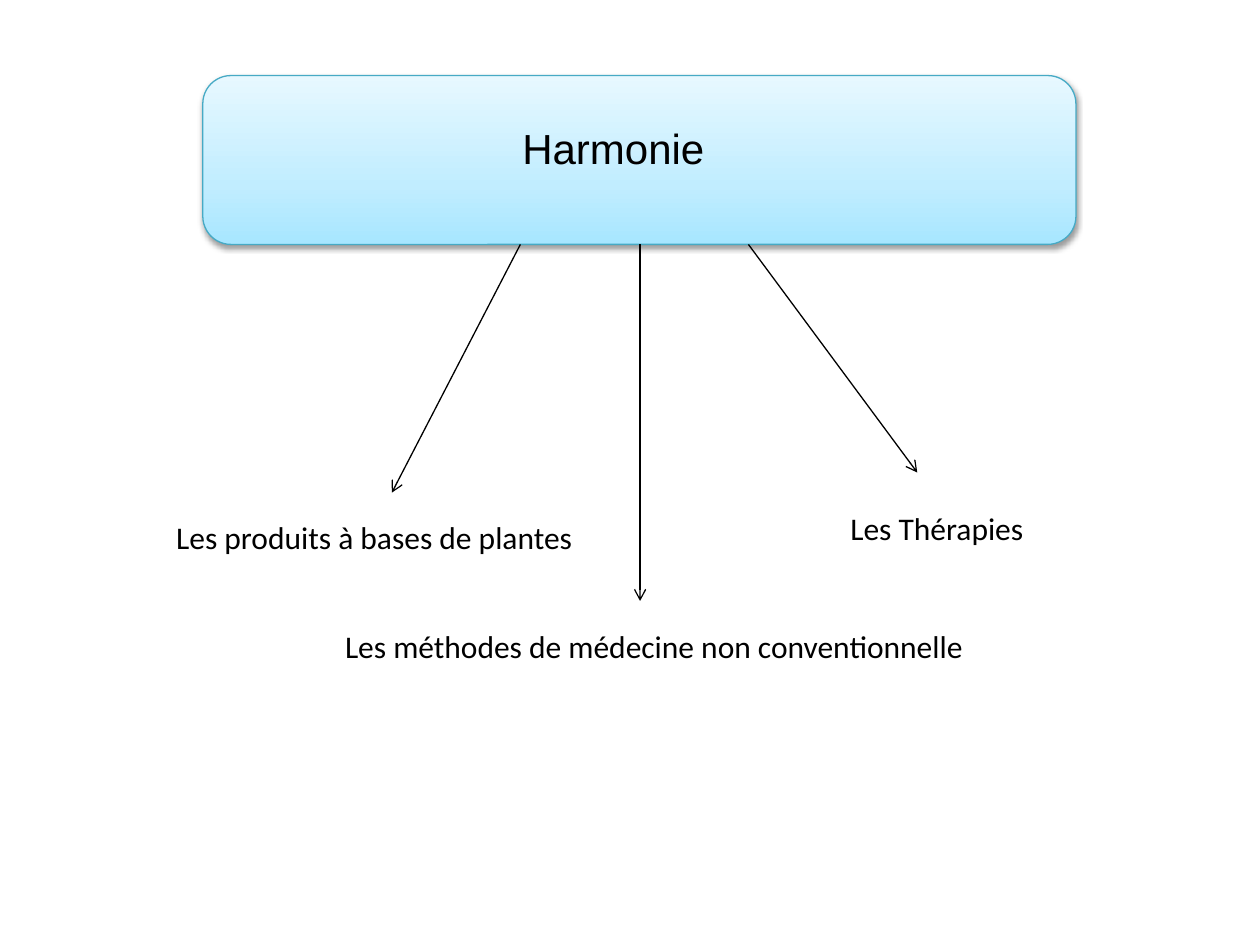
from collections import namedtuple

from lxml.etree import SubElement
from pptx import Presentation
from pptx.dml.color import RGBColor
from pptx.enum.shapes import MSO_CONNECTOR as Connector, MSO_SHAPE as Shape
from pptx.enum.text import MSO_ANCHOR as Anchor, MSO_AUTO_SIZE as AutoSize, PP_ALIGN as Align
from pptx.oxml.ns import qn
from pptx.util import Inches, Pt

BLACK = RGBColor(0x00, 0x00, 0x00)
TEAL = RGBColor(0x46, 0xAA, 0xC5)
SKY = RGBColor(0xA7, 0xE6, 0xFF)
PALE_SKY = RGBColor(0xC1, 0xED, 0xFF)
MIST = RGBColor(0xE7, 0xF8, 0xFF)

WIDTH, HEIGHT = 10, 7.5
BANNER_STOPS = [(0, SKY), (35, PALE_SKY), (100, MIST)]
TITLE_FONT = {"name": "Arial", "size": Pt(24), "bold": False}
BRANCH_FONT = {"name": "Calibri", "size": Pt(18)}

Box = namedtuple("Box", "left top width height")
Branch = namedtuple("Branch", "text start tip label")

BANNER = Box(1.61, 0.6, 6.93, 1.34)
BRANCHES = [
    Branch("Les produits à bases de plantes", 4.13, (3.11, 3.91), Box(1.3, 4.06, 3.39, 0.4)),
    Branch("Les Thérapies", 5.94, (7.28, 3.75), Box(6.65, 3.99, 1.59, 0.4)),
    Branch("Les méthodes de médecine non conventionnelle", 5.08, (5.08, 4.77),
           Box(2.64, 4.93, 5.17, 0.4)),
]


def inside(box, left, top, width, height):
    """Return the part of a box given by shares of its size."""
    return Box(box.left + left * box.width, box.top + top * box.height,
               width * box.width, height * box.height)


def emu(box):
    """Convert a box in inches to slide lengths."""
    return [Inches(length) for length in box]


def add_node(parent, tag, **attributes):
    """Append a DrawingML element with its attributes."""
    return SubElement(parent, qn(tag), {key: str(value) for key, value in attributes.items()})


def write(shape, text, font_format, **frame_format):
    """Put formatted text in a shape."""
    frame = shape.text_frame
    frame.text = text
    for key, value in frame_format.items():
        setattr(frame, key, value)
    font = frame.paragraphs[0].runs[0].font
    for key, value in font_format.items():
        setattr(font, key, value)
    font.color.rgb = BLACK


def paint_gradient(shape, stops):
    """Fill a shape upwards through the given colour stops."""
    shape.fill.gradient()
    shape.fill.gradient_angle = 90
    stop_list = shape.element.spPr.find(".//" + qn("a:gsLst"))
    stop_list[:] = []
    for position, colour in stops:
        stop = add_node(stop_list, "a:gs", pos=position * 1000)
        add_node(stop, "a:srgbClr", val=colour)


def cast_shadow(shape):
    """Give a shape a soft shadow below it."""
    shape.shadow.inherit = False
    effects = shape.element.spPr.find(qn("a:effectLst"))
    shadow = add_node(effects, "a:outerShdw", blurRad=Pt(3.1), dist=Pt(1.6),
                      dir=5400000, rotWithShape=0)
    colour = add_node(shadow, "a:srgbClr", val=BLACK)
    add_node(colour, "a:alpha", val=38000)


def draw_banner(slide, box, text):
    """Draw the rounded banner and set the slide title on it."""
    banner = slide.shapes.add_shape(Shape.ROUNDED_RECTANGLE, *emu(box))
    paint_gradient(banner, BANNER_STOPS)
    banner.line.color.rgb = TEAL
    banner.line.width = Pt(0.75)
    cast_shadow(banner)

    title = slide.shapes.title
    title.left, title.top, title.width, title.height = emu(inside(box, 0.1, 0.24, 0.74, 0.37))
    write(title, text, TITLE_FONT, word_wrap=True, vertical_anchor=Anchor.TOP,
          auto_size=AutoSize.SHAPE_TO_FIT_TEXT)
    title.text_frame.paragraphs[0].alignment = Align.CENTER
    banner.element.addnext(title.element)


def draw_branch(slide, box, branch):
    """Draw an arrow from the bottom of the box to a labelled branch."""
    ends = (branch.start, box.top + box.height, *branch.tip)
    arrow = slide.shapes.add_connector(Connector.STRAIGHT, *emu(ends))
    arrow.line.color.rgb = BLACK
    arrow.line.width = Pt(0.75)
    properties = arrow.element.spPr
    add_node(properties.find(qn("a:ln")), "a:tailEnd", type="arrow")
    add_node(properties, "a:effectLst")

    label = slide.shapes.add_textbox(*emu(branch.label))
    write(label, branch.text, BRANCH_FONT, word_wrap=False,
          auto_size=AutoSize.SHAPE_TO_FIT_TEXT)


def main():
    """Build the slide and save it."""
    deck = Presentation()
    deck.slide_width, deck.slide_height = Inches(WIDTH), Inches(HEIGHT)
    slide = deck.slides.add_slide(deck.slide_layouts.get_by_name("Title Only"))
    draw_banner(slide, BANNER, "Harmonie")
    for branch in BRANCHES:
        draw_branch(slide, BANNER, branch)
    deck.save("out.pptx")


if __name__ == "__main__":
    main()
